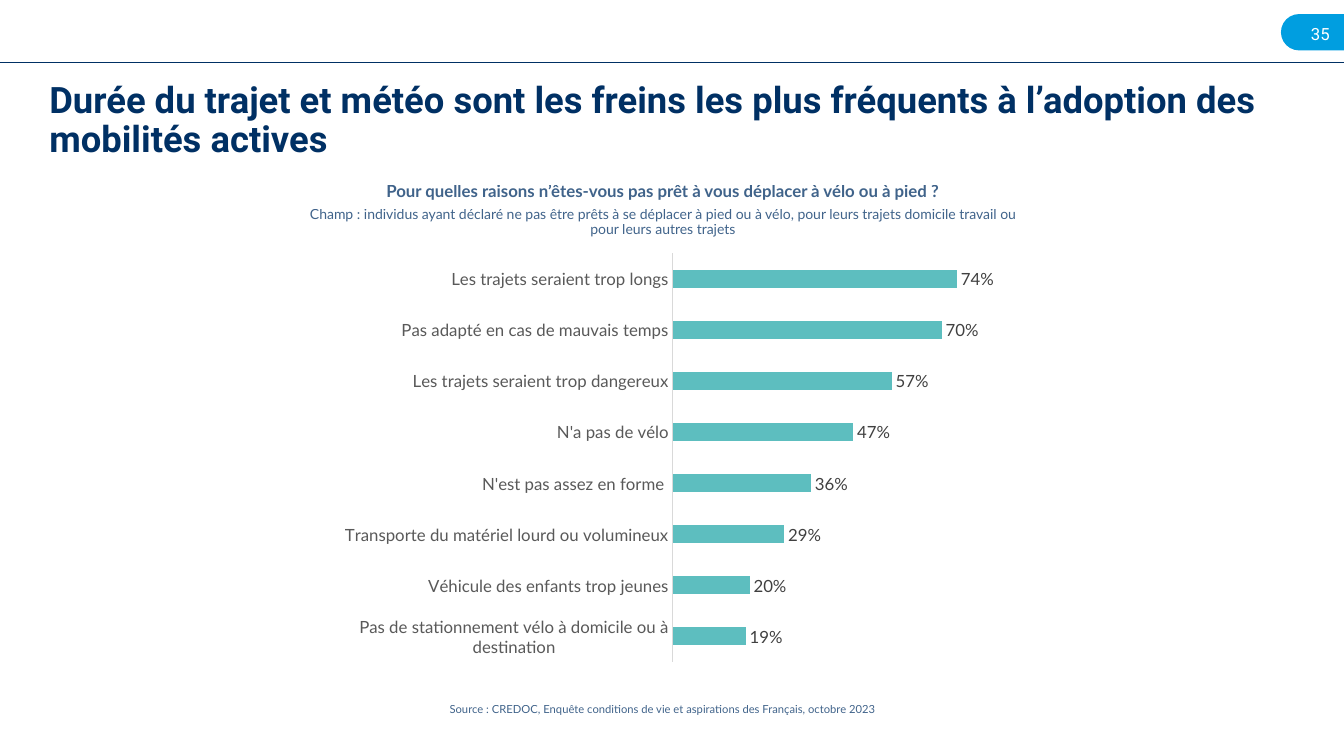
from pptx import Presentation
from pptx.chart.data import CategoryChartData
from pptx.dml.color import RGBColor
from pptx.enum import chart as ch, shapes, text
from pptx.oxml import parse_xml
from pptx.oxml.ns import nsdecls, qn
from pptx.util import Pt
from lxml import etree

NAVY = RGBColor(0x00, 0x30, 0x64)
BLUE = RGBColor(0x00, 0x9E, 0xE0)
TEAL = RGBColor(0x5D, 0xBE, 0xBF)
WHITE = RGBColor(0xFF, 0xFF, 0xFF)
BLACK = RGBColor(0x00, 0x00, 0x00)
AXIS_GREY = RGBColor(0xD9, 0xD9, 0xD9)
CATEGORY_GREY = RGBColor(0x59, 0x59, 0x59)
LABEL_GREY = RGBColor(0x40, 0x40, 0x40)

REASONS = [
    ("Pas de stationnement vélo à domicile ou à destination", 0.19),
    ("Véhicule des enfants trop jeunes", 0.20),
    ("Transporte du matériel lourd ou volumineux", 0.29),
    ("N'est pas assez en forme ", 0.36),
    ("N'a pas de vélo", 0.47),
    ("Les trajets seraient trop dangereux", 0.57),
    ("Pas adapté en cas de mauvais temps", 0.70),
    ("Les trajets seraient trop longs", 0.74),
]


def set_font(font, name, size, color, bold=False):
    font.name = name
    font.size = Pt(size)
    font.bold = bold
    font.color.rgb = color


def place(sp, left, top, width, height):
    sp.left, sp.top, sp.width, sp.height = Pt(left), Pt(top), Pt(width), Pt(height)


def fill_text(sp, content, align, name, size, color, bold=False,
              anchor=text.MSO_ANCHOR.TOP):
    tf = sp.text_frame
    tf.word_wrap = True
    tf.auto_size = text.MSO_AUTO_SIZE.NONE
    tf.vertical_anchor = anchor
    p = tf.paragraphs[0]
    p.text = content
    p.alignment = align
    p.line_spacing = 0.9
    p.space_before = Pt(0)
    set_font(p.font, name, size, color, bold)
    return p


def add_caption(s, content, top, height, size, bold=False):
    sp = s.shapes.add_textbox(Pt(204.5), Pt(top), Pt(538), Pt(height))
    p = fill_text(sp, content, text.PP_ALIGN.CENTER, "Lato", size, NAVY, bold)
    for clr in p._p.iter(qn("a:srgbClr")):
        etree.SubElement(clr, qn("a:alpha"), val="75000")


def add_header(s):
    tab = s.shapes.add_shape(shapes.MSO_SHAPE.ROUND_2_SAME_RECTANGLE,
                             Pt(924.5), Pt(0.5), Pt(26), Pt(45))
    tab.adjustments[0] = 0.5
    tab.rotation = 270
    tab.shadow.inherit = False
    tab.fill.solid()
    tab.fill.fore_color.rgb = BLUE
    tab.line.fill.background()

    number = s.shapes.add_textbox(Pt(914.5), Pt(13), Pt(42.5), Pt(23.5))
    fill_text(number, "35", text.PP_ALIGN.RIGHT, "Roboto", 12, WHITE,
              anchor=text.MSO_ANCHOR.MIDDLE)

    rule = s.shapes.add_connector(shapes.MSO_CONNECTOR.STRAIGHT,
                                  Pt(0), Pt(44.6), Pt(960), Pt(44.6))
    rule.line.color.rgb = NAVY
    rule.line.width = Pt(1)
    etree.SubElement(rule._element.spPr, qn("a:effectLst"))


def set_plot_layout(chart, x, y, w, h):
    plot_area = chart._chartSpace.chart.plotArea
    for old in plot_area.findall(qn("c:layout")):
        plot_area.remove(old)
    plot_area.insert(0, parse_xml(
        f'<c:layout {nsdecls("c")}><c:manualLayout>'
        '<c:layoutTarget val="inner"/>'
        '<c:xMode val="edge"/><c:yMode val="edge"/>'
        f'<c:x val="{x}"/><c:y val="{y}"/><c:w val="{w}"/><c:h val="{h}"/>'
        '</c:manualLayout></c:layout>'))


def add_reasons_chart(s):
    data = CategoryChartData(number_format="0%")
    data.categories = [reason for reason, _ in REASONS]
    data.add_series("Series 1", [share for _, share in REASONS])
    chart = s.shapes.add_chart(ch.XL_CHART_TYPE.BAR_CLUSTERED, Pt(237), Pt(175),
                               Pt(473), Pt(304), data).chart
    chart.has_legend = False
    chart.has_title = False
    set_font(chart.font, "Lato", 11, BLACK)
    set_plot_layout(chart, 0.515, 0.02, 0.464, 0.96)

    cat = chart.category_axis
    cat.major_tick_mark = ch.XL_TICK_MARK.NONE
    cat.has_major_gridlines = False
    cat.format.line.color.rgb = AXIS_GREY
    cat.format.line.width = Pt(0.75)
    set_font(cat.tick_labels.font, "Lato", 12, CATEGORY_GREY)

    val = chart.value_axis
    val.minimum_scale = 0
    val.maximum_scale = 0.8
    val.has_major_gridlines = False
    val.visible = False

    plot = chart.plots[0]
    plot.gap_width = 182
    plot.vary_by_categories = False
    fill = plot.series[0].format.fill
    fill.solid()
    fill.fore_color.rgb = TEAL
    plot.has_data_labels = True
    labels = plot.data_labels
    labels.show_value = True
    labels.number_format = "0%"
    labels.number_format_is_linked = False
    labels.position = ch.XL_LABEL_POSITION.OUTSIDE_END
    set_font(labels.font, "Lato", 12, LABEL_GREY)


def main():
    prs = Presentation()
    prs.slide_width, prs.slide_height = Pt(960), Pt(540)
    s = prs.slides.add_slide(prs.slide_layouts[5])
    add_header(s)
    title = s.shapes.title
    place(title, 28, 54.7, 899, 60.5)
    fill_text(title, "Durée du trajet et météo sont les freins les plus fréquents "
              "à l’adoption des mobilités actives",
              text.PP_ALIGN.LEFT, "Roboto", 26, NAVY, True)
    add_caption(s, "Pour quelles raisons n’êtes-vous pas prêt à vous déplacer "
                "à vélo ou à pied ?", 127.5, 16.5, 12, True)
    add_caption(s, "Champ : individus ayant déclaré ne pas être prêts à se déplacer "
                "à pied ou à vélo, pour leurs trajets domicile travail ou "
                "pour leurs autres trajets", 144.5, 16.5, 10)
    add_reasons_chart(s)
    add_caption(s, "Source : CREDOC, Enquête conditions de vie et aspirations "
                "des Français, octobre 2023", 499.5, 26.5, 8)
    prs.save("out.pptx")


if __name__ == "__main__":
    main()
